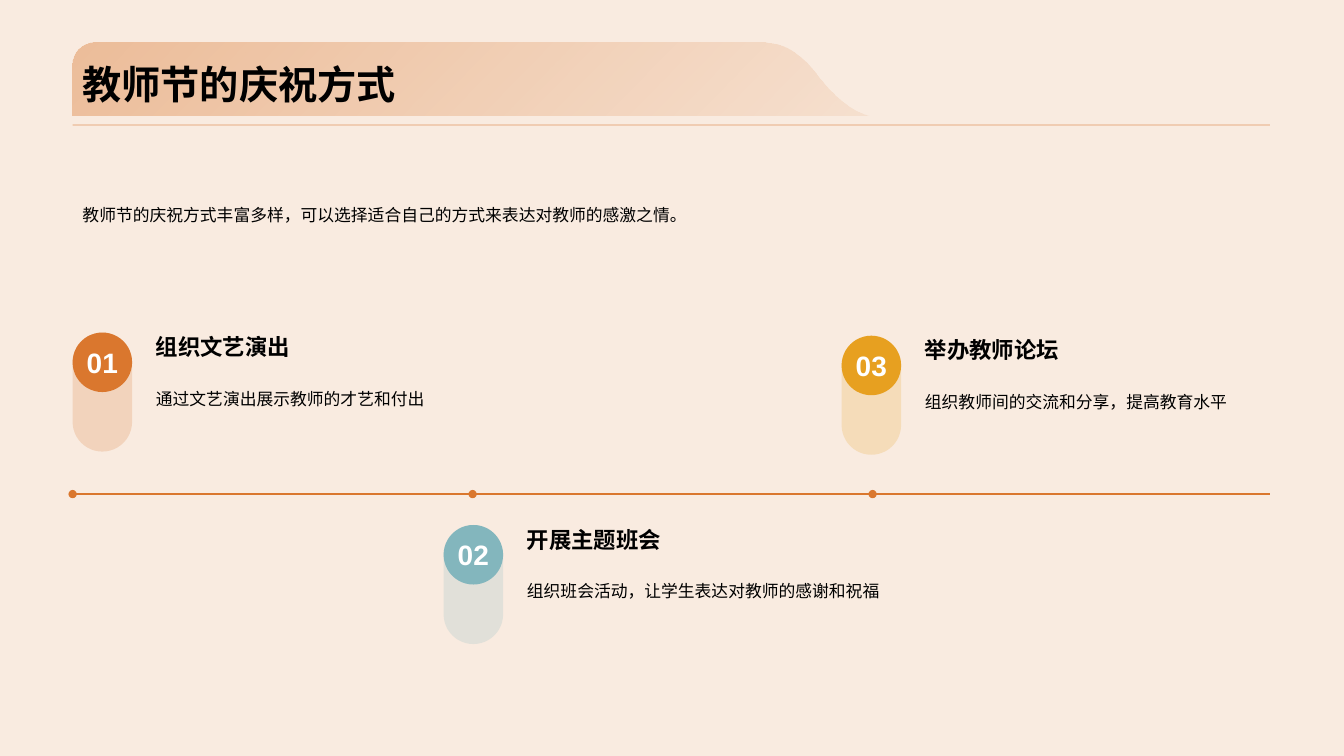
"""Build the slide on ways to celebrate Teachers' Day."""
from pptx import Presentation
from pptx.dml.color import RGBColor
from pptx.enum.shapes import MSO_CONNECTOR, MSO_SHAPE
from pptx.enum.text import MSO_ANCHOR, PP_ALIGN
from pptx.oxml.ns import qn
from pptx.util import Cm, Pt
from lxml.etree import SubElement

ORANGE = RGBColor(0xDA, 0x77, 0x2E)
TEAL = RGBColor(0x83, 0xB6, 0xBD)
AMBER = RGBColor(0xE7, 0xA0, 0x20)
CREAM = RGBColor(0xF9, 0xEB, 0xE0)
BLACK = RGBColor(0, 0, 0)
WHITE = RGBColor(0xFF, 0xFF, 0xFF)

TITLE = "教师节的庆祝方式"
INTRO = "教师节的庆祝方式丰富多样，可以选择适合自己的方式来表达对教师的感激之情。"
ITEMS = [
    ("组织文艺演出", "通过文艺演出展示教师的才艺和付出", ORANGE, 1.83, 8.38, 10.92),
    ("开展主题班会", "组织班会活动，让学生表达对教师的感谢和祝福", TEAL, 11.18, 13.23, 9.65),
    ("举办教师论坛", "组织教师间的交流和分享，提高教育水平", AMBER, 21.21, 8.46, 8.97),
]
BANNER = [
    [(20.45, 1.7), (19.96, 1.17), (19.58, 1.07), (19.2, 1.07)],
    [(2.39, 1.07), (2.08, 1.07), (1.83, 1.32), (1.83, 1.65)],
    [(1.83, 2.9)],
    [(21.92, 2.9), (21.29, 2.72), (20.9, 2.26), (20.45, 1.7)],
]
LEFT, RIGHT = 1.83, 32.0
DOT = 1.5
TIMELINE_Y, STEP, SEGMENT = 12.45, 10.08, 10.01
CURVE_STEPS = 24

TITLE_STYLE = {"size": Pt(28), "bold": True}
NUMBER_STYLE = {"size": Pt(20), "bold": True}
HEADING_STYLE = {"size": Pt(16), "bold": True}
BODY_STYLE = {"size": Pt(12), "bold": False}
INSETS = {f"margin_{side}": Cm(0.3) for side in ("left", "right", "top", "bottom")}


def bezier(points):
    """Return points along a cubic curve, or the lone point given."""
    if len(points) == 1:
        return points
    curve = []
    for i in range(CURVE_STEPS + 1):
        t = i / CURVE_STEPS
        weights = ((1 - t) ** 3, 3 * t * (1 - t) ** 2, 3 * t * t * (1 - t), t ** 3)
        curve.append(tuple(sum(w * pt[k] for w, pt in zip(weights, points)) for k in (0, 1)))
    return curve


def set_alpha(s, *percents):
    """Give the colours of a shape their opacity in turn."""
    for color, percent in zip(s._element.spPr.iter(qn("a:srgbClr")), percents):
        SubElement(color, qn("a:alpha")).set("val", str(percent * 1000))


def write(s, text, style, color=BLACK, align=PP_ALIGN.LEFT, spacing=1.0, **frame):
    """Put one styled paragraph into a shape."""
    tf = s.text_frame
    for name, value in {"word_wrap": True, **frame}.items():
        setattr(tf, name, value)
    p = tf.paragraphs[0]
    p.alignment, p.line_spacing = align, spacing
    r = p.add_run()
    r.text = text
    for name, value in {"name": "Arial", **style}.items():
        setattr(r.font, name, value)
    r.font.color.rgb = color


def add_text(sp, box, text, style, **options):
    """Add a text box."""
    write(sp.add_textbox(*map(Cm, box)), text, style, **options)


def add_line(sp, x1, x2, y, width):
    """Add a level orange line."""
    s = sp.add_connector(MSO_CONNECTOR.STRAIGHT, Cm(x1), Cm(y), Cm(x2), Cm(y))
    s.line.color.rgb, s.line.width = ORANGE, Pt(width)
    SubElement(s._element.spPr, qn("a:effectLst"))
    return s


def add_pill(sp, x, y, height, color):
    """Add a fully rounded shape."""
    s = sp.add_shape(MSO_SHAPE.ROUNDED_RECTANGLE, Cm(x), Cm(y), Cm(DOT), Cm(height))
    s.adjustments[0] = 0.5
    s.shadow.inherit = False
    s.fill.solid()
    s.fill.fore_color.rgb = color
    s.line.fill.background()
    return s


def add_banner(sp):
    """Add the faded title banner."""
    points = [(Cm(x), Cm(y)) for part in BANNER for x, y in bezier(part)]
    builder = sp.build_freeform(*points[0], scale=1.0)
    builder.add_line_segments(points[1:], close=True)
    s = builder.convert_to_shape()
    s.shadow.inherit = False
    s.line.fill.background()
    s.fill.gradient()
    s.fill.gradient_angle = 315
    for stop, position in zip(s.fill.gradient_stops, (0, 1)):
        stop.color.rgb, stop.position = ORANGE, position
    set_alpha(s, 40, 10)


def main():
    """Draw and save the slide."""
    prs = Presentation()
    prs.slide_width, prs.slide_height = Cm(33.87), Cm(19.05)
    slide = prs.slides.add_slide(prs.slide_layouts[6])
    slide.background.fill.solid()
    slide.background.fill.fore_color.rgb = CREAM
    sp = slide.shapes

    add_banner(sp)
    set_alpha(add_line(sp, LEFT, RIGHT, 3.15, 1), 40)
    add_text(sp, (LEFT, 0, RIGHT - LEFT, 2.84), TITLE, TITLE_STYLE,
             vertical_anchor=MSO_ANCHOR.BOTTOM)
    add_text(sp, (LEFT, 4.93, RIGHT - LEFT, 0.81), INTRO, BODY_STYLE, spacing=1.2)

    for i, (heading, body, color, x, y, width) in enumerate(ITEMS):
        start = LEFT + i * STEP
        segment = add_line(sp, start, start + SEGMENT, TIMELINE_Y, 1.25)
        SubElement(segment.line._get_or_add_ln(), qn("a:headEnd")).set("type", "oval")

        set_alpha(add_pill(sp, x, y, 2 * DOT, color), 20)
        write(add_pill(sp, x, y, DOT, color), f"{i + 1:02}", NUMBER_STYLE, color=WHITE,
              align=PP_ALIGN.CENTER, vertical_anchor=MSO_ANCHOR.MIDDLE,
              **{**INSETS, "word_wrap": False})
        add_text(sp, (x + 1.8, y - 0.3, width, 1.3), heading, HEADING_STYLE,
                 vertical_anchor=MSO_ANCHOR.BOTTOM, **INSETS)
        add_text(sp, (x + 1.8, y + 1.01, width, 1.17), body, BODY_STYLE, spacing=1.2, **INSETS)

    prs.save("out.pptx")


if __name__ == "__main__":
    main()
